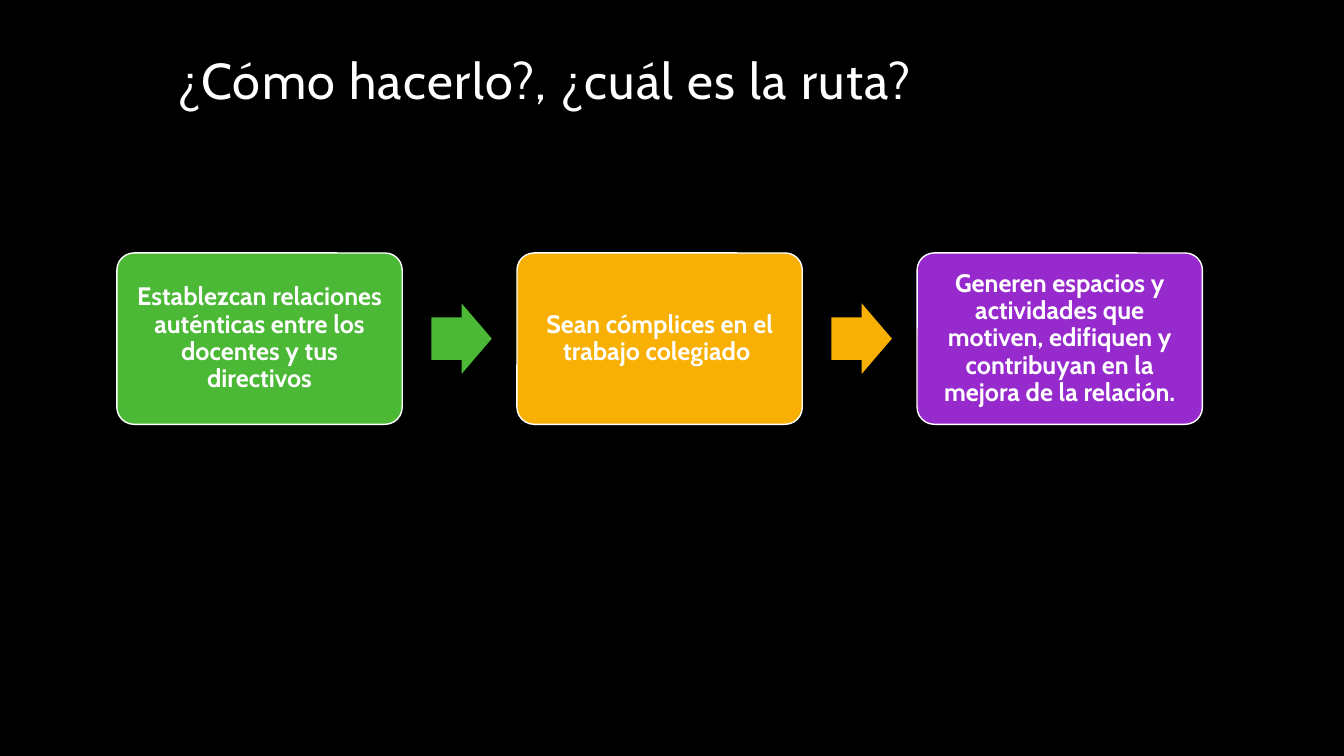
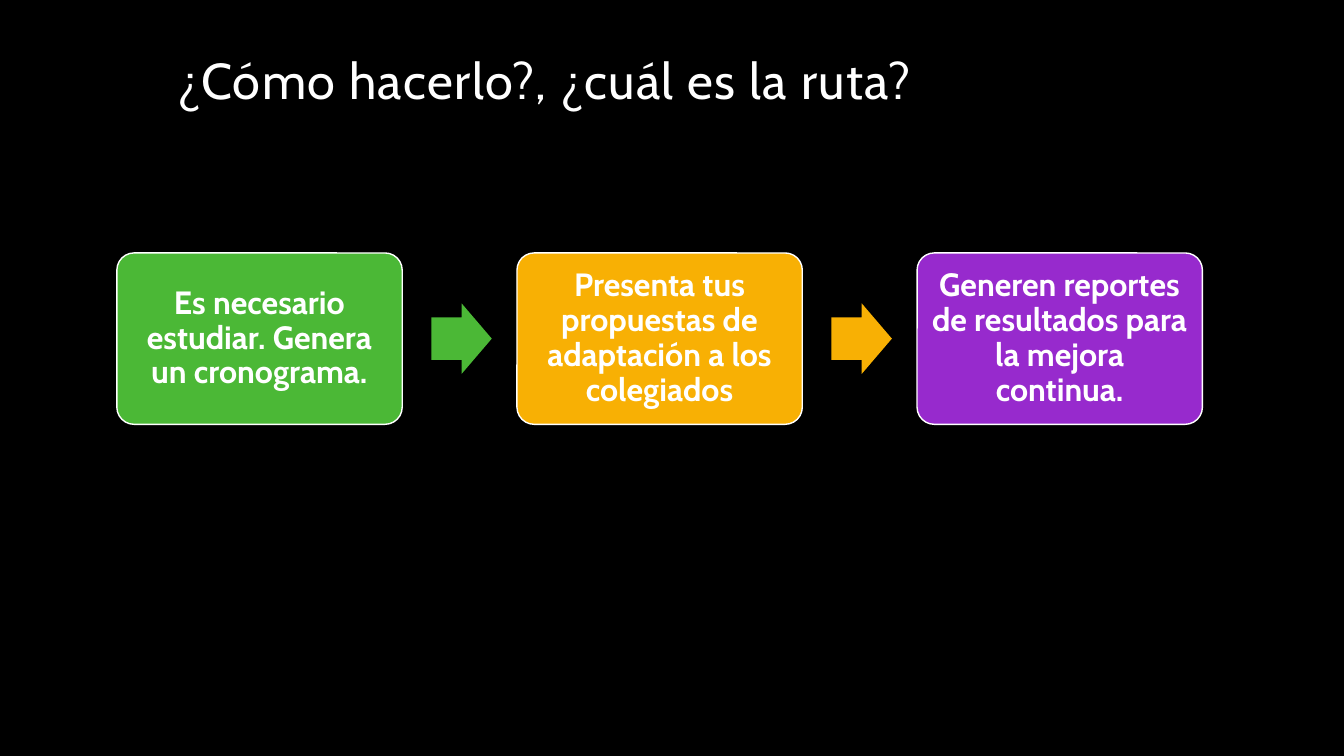
import pptx
import pptx.util
import pptx.dml.color
import pptx.enum.shapes
import pptx.enum.text

Pt = pptx.util.Pt
Shape = pptx.enum.shapes.MSO_SHAPE
Align = pptx.enum.text.PP_ALIGN
Anchor = pptx.enum.text.MSO_ANCHOR

WHITE, BLACK = "FFFFFF", "000000"
HUES = ["4BB836", "F8B004", "972ACD"]
TITLE = "¿Cómo hacerlo?, ¿cuál es la ruta?"
HEAD = (119.5, 30.2, 720, 52.6)
FLOW = (83.5, 180.7, 775.4, 122.4)
CARD = 203.8
ARROW = (43.2, 50.5)
LEAD = 20.8
SLIDES = [
    (18, 5.4, [
        "Establezcan relaciones auténticas entre los docentes y tus directivos",
        "Sean cómplices en el trabajo colegiado ",
        "Generen espacios y actividades que motiven, edifiquen y contribuyan en la mejora de la relación.",
    ]),
    (23, 6.9, [
        "Es necesario estudiar. Genera un cronograma.",
        "Presenta tus propuestas de adaptación a los colegiados",
        "Generen reportes de resultados para la mejora continua.",
    ]),
]


def paint(part, hue):
    """Give a fill a solid colour from a hex string."""
    part.solid()
    part.fore_color.rgb = pptx.dml.color.RGBColor.from_string(hue)


def apply(target, form):
    """Set each attribute named in a dict of format values."""
    for name, value in form.items():
        setattr(target, name, value)


def write(shape, text, frame, para, font):
    """Put one formatted paragraph in a shape and return its run."""
    body = shape.text_frame
    apply(body, {"word_wrap": True, **frame})
    line = body.paragraphs[0]
    apply(line, {"line_spacing": 0.9, **para})
    run = line.add_run()
    run.text = text
    apply(run.font, {"name": "Cabin", **font})
    paint(run.font.fill, WHITE)
    return run


def block(slide, kind, box, hue, adjust):
    """Draw a flat preset shape with no outline."""
    shape = slide.shapes.add_shape(kind, *map(Pt, box))
    shape.shadow.inherit = False
    paint(shape.fill, hue)
    shape.line.fill.background()
    for spot, value in enumerate(adjust):
        shape.adjustments[spot] = value
    return shape


def head(slide, box):
    """Place the slide title in its box."""
    title = slide.shapes.title
    apply(title, dict(zip(("left", "top", "width", "height"), map(Pt, box))))
    run = write(title, TITLE, {"vertical_anchor": Anchor.BOTTOM},
                {"alignment": Align.LEFT}, {"size": Pt(36)})
    run.font._element.set("spc", "100")


def card(slide, box, hue, text, size, inset):
    """Draw one outlined step with centred text."""
    shape = block(slide, Shape.ROUNDED_RECTANGLE, box, hue, [0.1])
    paint(shape.line.fill, WHITE)
    shape.line.width = Pt(1)
    sides = ("margin_left", "margin_top", "margin_right", "margin_bottom")
    write(shape, text,
          {"vertical_anchor": Anchor.MIDDLE, **dict.fromkeys(sides, Pt(inset))},
          {"alignment": Align.CENTER}, {"size": Pt(size), "bold": True})


def flow(slide, box, size, inset, steps):
    """Spread the steps evenly over a box, with an arrow after all but the last."""
    left, top, width, height = box
    pitch = (width - CARD) / (len(steps) - 1)
    wide, high = ARROW
    for spot, (text, hue) in enumerate(zip(steps, HUES)):
        x = left + spot * pitch
        card(slide, (x, top, CARD, height), hue, text, size, inset)
        if spot < len(steps) - 1:
            place = (x + CARD + LEAD, top + (height - high) / 2, wide, high)
            block(slide, Shape.RIGHT_ARROW, place, hue, [0.6, 0.5])


def main():
    """Build and save the deck."""
    deck = pptx.Presentation()
    apply(deck, {"slide_width": Pt(960), "slide_height": Pt(540)})
    paint(deck.slide_master.background.fill, BLACK)
    for size, inset, steps in SLIDES:
        slide = deck.slides.add_slide(deck.slide_layouts[5])
        head(slide, HEAD)
        flow(slide, FLOW, size, inset, steps)
    deck.save("out.pptx")


if __name__ == "__main__":
    main()
